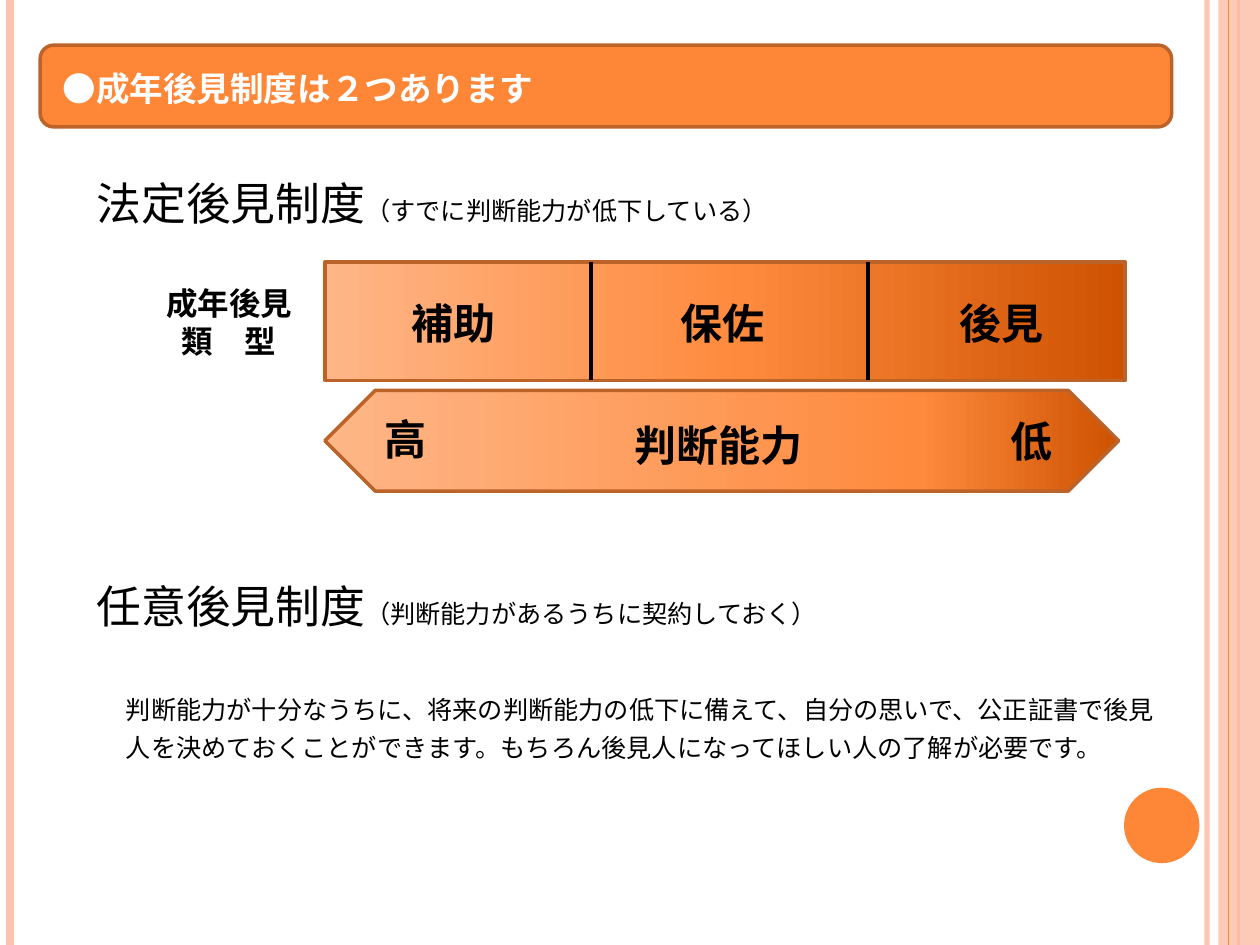
from lxml import etree
from pptx import Presentation
from pptx.dml.color import RGBColor
from pptx.enum.shapes import MSO_CONNECTOR as Connector, MSO_SHAPE as Shape
from pptx.enum.text import MSO_ANCHOR as Anchor, PP_ALIGN as Align
from pptx.oxml.ns import qn
from pptx.util import Cm, Pt

FONT = "Noto Sans CJK JP"
BLACK = RGBColor(0x00, 0x00, 0x00)
WHITE = RGBColor(0xFF, 0xFF, 0xFF)
ORANGE = RGBColor(0xFE, 0x86, 0x37)
BROWN = RGBColor(0xBC, 0x63, 0x29)
PEACH = RGBColor(0xFE, 0xC3, 0xAE)
DARK = RGBColor(0xCE, 0x52, 0x01)
MIDDLE = RGBColor(0xFE, 0x8A, 0x3D)
LIGHT = RGBColor(0xFE, 0xB6, 0x87)
PAGE_WIDTH, PAGE_HEIGHT = 25.4, 19.05


def set_alpha(fill, percent):
    """Make a solid fill partly transparent."""
    color = next(fill.fore_color._xFill.iter(qn("a:srgbClr")))
    etree.SubElement(color, qn("a:alpha"), val=str(percent * 1000))


def set_gradient(shape, middle, angle):
    """Fill with dark, middle and light stops; the angle runs clockwise."""
    shape.fill.gradient()
    gradient = shape._element.spPr.find(qn("a:gradFill"))
    stops = gradient.find(qn("a:gsLst"))
    for stop in list(stops):
        stops.remove(stop)
    for position, color in ((0, DARK), (middle, MIDDLE), (100, LIGHT)):
        stop = etree.SubElement(stops, qn("a:gs"), pos=str(position * 1000))
        etree.SubElement(stop, qn("a:srgbClr"), val=str(color))
    gradient.find(qn("a:lin")).set("ang", str(angle * 60000))


def add_shape(page, kind, left, top, width, height, fill=None, outlined=False):
    shape = page.shapes.add_shape(kind, Cm(left), Cm(top), Cm(width), Cm(height))
    shape.shadow.inherit = False
    if fill is not None:
        shape.fill.solid()
        shape.fill.fore_color.rgb = fill
    if outlined:
        shape.line.color.rgb = BROWN
        shape.line.width = Pt(2)
    else:
        shape.line.fill.background()
    return shape


def add_vertical(page, x, top, height, color, weight):
    line = page.shapes.add_connector(
        Connector.STRAIGHT, Cm(x), Cm(top), Cm(x), Cm(top + height))
    line.line.color.rgb = color
    line.line.width = Pt(weight)
    etree.SubElement(line._element.spPr, qn("a:effectLst"))
    return line


def add_text(page, left, top, width, height, spans, color=BLACK, bold=False,
             small_caps=False, align=Align.LEFT, anchor=Anchor.TOP,
             spacing=1.2, bottom=0.13):
    """Add one paragraph; spans are pairs of wording and size in points."""
    box = page.shapes.add_textbox(Cm(left), Cm(top), Cm(width), Cm(height))
    frame = box.text_frame
    frame.word_wrap = True
    frame.vertical_anchor = anchor
    frame.margin_bottom = Cm(bottom)
    para = frame.paragraphs[0]
    para.alignment = align
    para.line_spacing = Pt(spacing * max(size for _, size in spans))
    for wording, size in spans:
        span = para.add_run()
        span.text = wording
        span.font.name = FONT
        span.font.size = Pt(size)
        span.font.bold = bold
        span.font.color.rgb = color
        properties = span.font._element
        etree.SubElement(properties, qn("a:ea"), typeface=FONT)
        if small_caps:
            properties.set("cap", "small")


def add_caption(page, left, top, width, wording):
    add_text(page, left, top, width, 1.27, [(wording, 24)], bold=True,
             align=Align.CENTER, spacing=1.3)


def add_frame(page):
    """Stripes along both edges and the disc at lower right."""
    stripe = add_vertical(page, 24.33, 0, PAGE_HEIGHT, PEACH, 3)
    set_alpha(stripe.line.fill, 93)
    add_vertical(page, 0.2, 0, PAGE_HEIGHT, PEACH, 4.5)
    add_vertical(page, 24.97, 0, PAGE_HEIGHT, ORANGE, 1.5)
    band = add_shape(page, Shape.RECTANGLE, 24.56, 0, PAGE_WIDTH - 24.56,
                     PAGE_HEIGHT, PEACH)
    set_alpha(band.fill, 87)
    add_vertical(page, 24.77, 0, PAGE_HEIGHT, ORANGE, 0.75)
    add_shape(page, Shape.OVAL, 22.66, 15.88, 1.52, 1.52, ORANGE)


def add_title(page, left, top, width, height):
    add_shape(page, Shape.ROUNDED_RECTANGLE, left, top, width, height,
              ORANGE, outlined=True)
    add_text(page, left + 0.2, top + 0.1, 18.72, 2.31,
             [("●成年後見制度は２つあります", 24)], color=WHITE, bold=True,
             small_caps=True, anchor=Anchor.BOTTOM, bottom=1.1)


def add_heading(page, left, top, name, remark):
    add_text(page, left, top, 21.64, 3.99, [(name, 32), (remark, 18)],
             small_caps=True, anchor=Anchor.BOTTOM, bottom=1.1)


def add_types(page, left, top, width, height):
    """Three guardianship types on one graded bar."""
    add_text(page, left - 3.68, top + 0.33, 3.5, 1.8,
             [("成年後見類　型", 18)], bold=True, align=Align.CENTER)
    bar = add_shape(page, Shape.RECTANGLE, left, top, width, height, outlined=True)
    set_gradient(bar, 48, 180)
    for offset, wording in ((1.12, "補助"), (6.55, "保佐"), (12.17, "後見")):
        add_caption(page, left + offset, top + 0.5, 2.95, wording)
    for offset in (5.36, 10.95):
        add_vertical(page, left + offset, top, height, BLACK, 2)


def add_ability(page, left, top, width, height):
    """Double arrow from high to low ability, an upright arrow turned left."""
    arrow = add_shape(page, Shape.UP_DOWN_ARROW, left + (width - height) / 2,
                      top - (width - height) / 2, height, width, outlined=True)
    arrow.rotation = 270
    arrow.adjustments[0] = 0.5
    arrow.adjustments[1] = 1.1
    set_gradient(arrow, 25, 270)
    add_caption(page, left + 0.55, top + 0.25, 2.16, "高")
    add_caption(page, left + 13.17, top + 0.3, 2.16, "低")
    add_caption(page, left + 3.57, top + 0.38, 8.74, "判断能力")


def main():
    deck = Presentation()
    deck.slide_width, deck.slide_height = Cm(PAGE_WIDTH), Cm(PAGE_HEIGHT)
    page = deck.slides.add_slide(deck.slide_layouts[6])
    add_frame(page)
    add_title(page, 0.81, 0.91, 22.81, 1.65)

    # Statutory guardianship
    add_heading(page, 1.7, 1.78, "法定後見制度", "（すでに判断能力が低下している）")
    add_types(page, 6.55, 5.28, 16.13, 2.39)
    add_ability(page, 6.55, 7.87, 16, 2.03)

    # Voluntary guardianship
    add_heading(page, 1.7, 9.91, "任意後見制度", "（判断能力があるうちに契約しておく）")
    add_text(page, 2.29, 13.21, 21.64, 2.31,
             [("判断能力が十分なうちに、将来の判断能力の低下に備えて、"
               "自分の思いで、公正証書で後見人を決めておくことができます。"
               "もちろん後見人になってほしい人の了解が必要です。", 18)],
             small_caps=True, anchor=Anchor.BOTTOM)
    deck.save("out.pptx")


if __name__ == "__main__":
    main()
